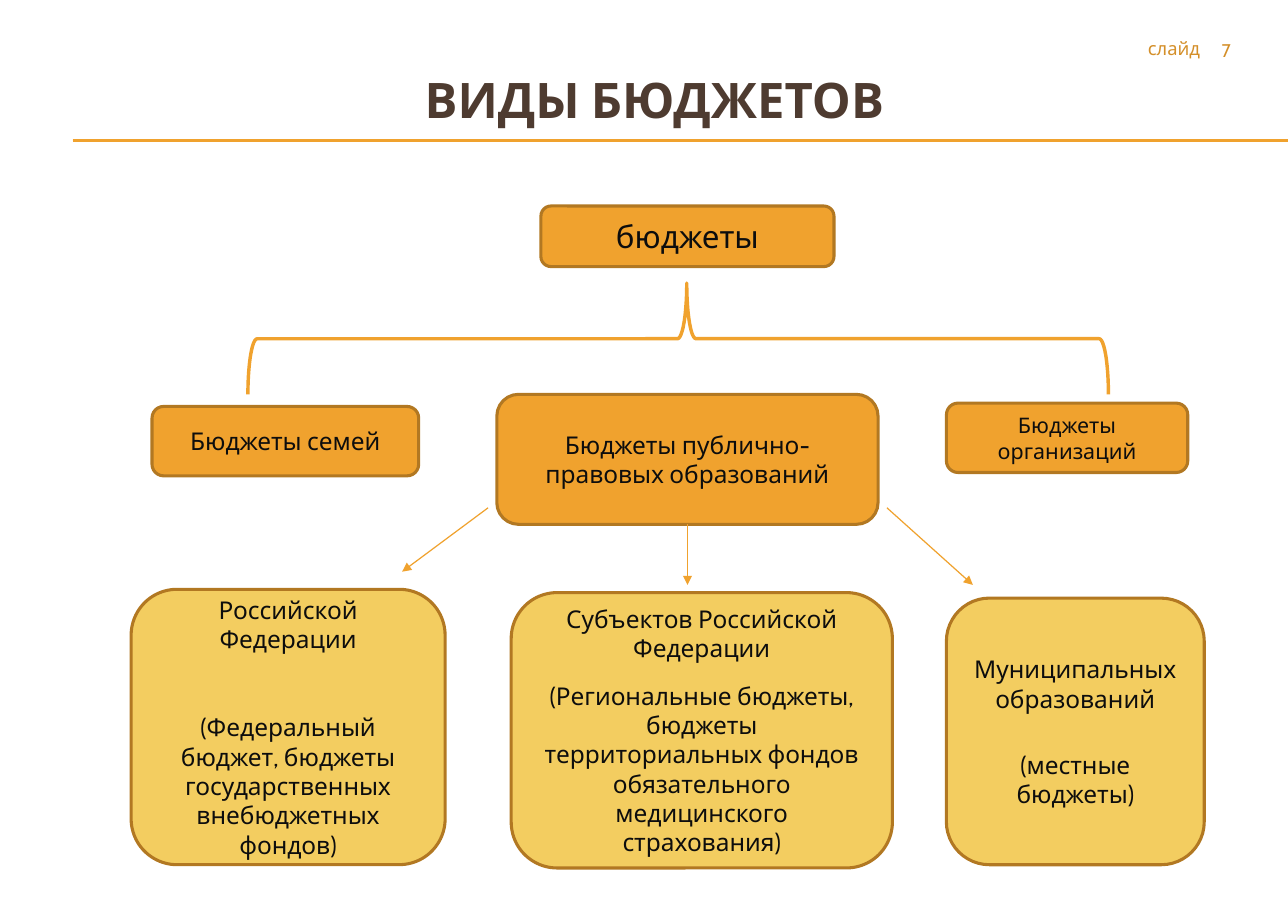
from dataclasses import dataclass

from lxml.etree import SubElement
from pptx import Presentation
from pptx.dml.color import RGBColor
from pptx.enum.shapes import MSO_CONNECTOR, MSO_SHAPE
from pptx.enum.text import MSO_ANCHOR, PP_ALIGN
from pptx.oxml.ns import qn
from pptx.util import Inches, Pt


@dataclass(frozen=True)
class Theme:
    font: str = "Cabin"
    accent: str = "F0A22E"
    border: str = "B27822"
    level_fill: str = "F3CD60"
    ink: str = "0D0D0D"
    heading: str = "4E3B30"
    page_mark: str = "D48F29"
    title_size: float = 32
    root_size: float = 20.5
    body_size: float = 16
    compact_size: float = 14
    mark_size: float = 12
    rule_width: float = 0.75
    arrow_width: float = 0.79
    border_width: float = 2
    brace_width: float = 2.25


THEME = Theme()


def rgb(color):
    return RGBColor.from_string(color)


def inches(*lengths):
    return [Inches(length) for length in lengths]


def set_line(line, color, width):
    line.color.rgb = rgb(color)
    line.width = Pt(width)


def write(frame, text, size=THEME.body_size, color=THEME.ink, bold=False,
          align=PP_ALIGN.CENTER, anchor=MSO_ANCHOR.MIDDLE, gap=0):
    frame.word_wrap = True
    frame.vertical_anchor = anchor
    for index, content in enumerate(text.split("\n")):
        paragraph = frame.add_paragraph() if index else frame.paragraphs[0]
        paragraph.alignment = align
        paragraph.space_before = Pt(gap if index else 0)
        run = paragraph.add_run()
        run.text = content
        run.font.name = THEME.font
        run.font.size = Pt(size)
        run.font.bold = bold
        run.font.color.rgb = rgb(color)


def add_label(slide, place, text, **text_format):
    label = slide.shapes.add_textbox(*inches(*place))
    write(label.text_frame, text, **text_format)


def add_box(slide, place, text, fill=THEME.accent, **text_format):
    box = slide.shapes.add_shape(MSO_SHAPE.ROUNDED_RECTANGLE, *inches(*place))
    box.shadow.inherit = False
    box.fill.solid()
    box.fill.fore_color.rgb = rgb(fill)
    set_line(box.line, THEME.border, THEME.border_width)
    write(box.text_frame, text, **text_format)
    return box


def add_brace(slide, place):
    brace = slide.shapes.add_shape(MSO_SHAPE.LEFT_BRACE, *inches(*place))
    brace.rotation = 90
    brace.adjustments[0] = 0.083
    brace.adjustments[1] = 0.49
    brace.shadow.inherit = False
    brace.fill.background()
    set_line(brace.line, THEME.accent, THEME.brace_width)


def add_line(slide, start, end, width=THEME.rule_width, arrow=False):
    line = slide.shapes.add_connector(
        MSO_CONNECTOR.STRAIGHT, *inches(*start, *end))
    set_line(line.line, THEME.accent, width)
    properties = line.element.spPr
    if arrow:
        SubElement(properties.find(qn("a:ln")), qn("a:tailEnd"), type="triangle")
    SubElement(properties, qn("a:effectLst"))
    return line


def add_arrow(slide, start, end):
    return add_line(slide, start, end, width=THEME.arrow_width, arrow=True)


def add_header(slide):
    for height in (1.27, 1.28):
        add_line(slide, (0.66, height), (11.69, height))
    add_label(slide, (1.19, 0.44, 9.5, 0.92), "ВИДЫ БЮДЖЕТОВ",
              size=THEME.title_size, color=THEME.heading, bold=True)
    for place, text in (((10.3, 0.31, 0.97, 0.3), "7"),
                        ((7.29, 0.29, 3.7, 0.35), "слайд")):
        add_label(slide, place, text, size=THEME.mark_size,
                  color=THEME.page_mark, align=PP_ALIGN.RIGHT,
                  anchor=MSO_ANCHOR.TOP)


def add_budget_kinds(slide):
    add_box(slide, (4.91, 1.87, 2.66, 0.55), "бюджеты", size=THEME.root_size)
    add_brace(slide, (5.65, -0.83, 1.01, 7.81))
    add_box(slide, (1.38, 3.69, 2.42, 0.63), "Бюджеты семей")
    add_box(slide, (8.59, 3.66, 2.19, 0.63), "Бюджеты организаций",
            size=THEME.compact_size)
    return add_box(slide, (4.51, 3.58, 3.46, 1.18),
                   "Бюджеты публично-правовых образований")


def add_public_levels(slide, public_budgets):
    levels = (
        ((1.19, 5.35, 2.85, 2.5), 38.4,
         "Российской Федерации\n(Федеральный бюджет, бюджеты "
         "государственных внебюджетных фондов)"),
        ((4.64, 5.38, 3.46, 2.5), 12,
         "Субъектов Российской Федерации\n(Региональные бюджеты, бюджеты "
         "территориальных фондов обязательного медицинского страхования)"),
        ((8.59, 5.43, 2.34, 2.42), 24,
         "Муниципальных образований\n(местные бюджеты)"),
    )
    for place, gap, text in levels:
        add_box(slide, place, text, fill=THEME.level_fill, gap=gap)
    add_arrow(slide, (4.43, 4.61), (3.65, 5.19))
    add_arrow(slide, (8.05, 4.61), (8.83, 5.31))
    regional_arrow = add_arrow(slide, (6.24, 4.76), (6.24, 5.31))
    regional_arrow.begin_connect(public_budgets, 2)


def main():
    presentation = Presentation()
    presentation.slide_width, presentation.slide_height = inches(11.69, 8.27)
    slide = presentation.slides.add_slide(presentation.slide_layouts[6])
    add_header(slide)
    public_budgets = add_budget_kinds(slide)
    add_public_levels(slide, public_budgets)
    presentation.save("out.pptx")


if __name__ == "__main__":
    main()
